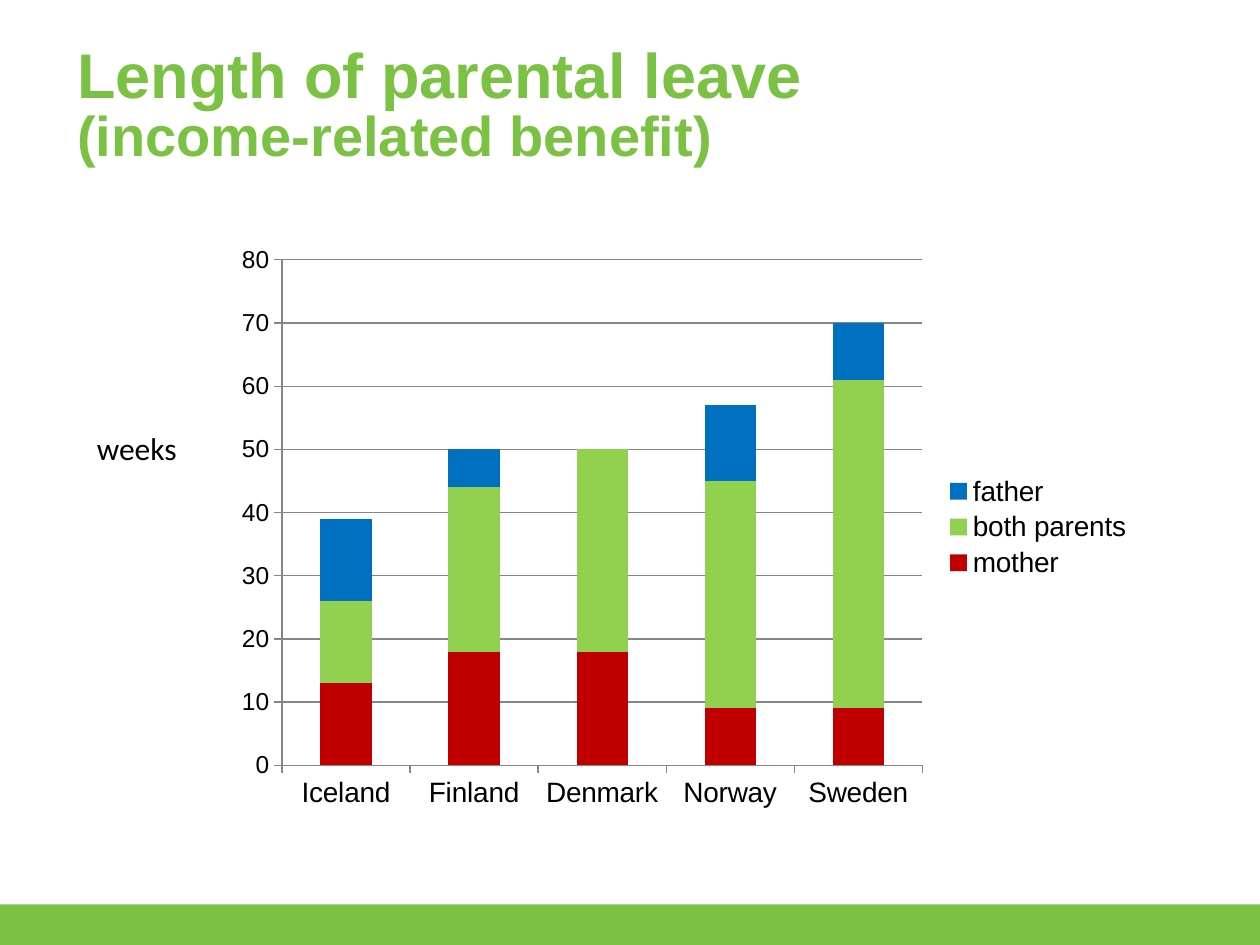
from pptx import Presentation
from pptx.chart.data import CategoryChartData
from pptx.dml.color import RGBColor
from pptx.enum.chart import XL_CHART_TYPE as Chart, XL_LEGEND_POSITION as Legend, XL_TICK_MARK as Tick
from pptx.enum.shapes import MSO_SHAPE as Shape
from pptx.enum.text import MSO_ANCHOR as Anchor
from pptx.util import Inches, Pt

GREEN = RGBColor(0x7B, 0xC1, 0x43)
BLACK = RGBColor(0x00, 0x00, 0x00)
GREY = RGBColor(0x86, 0x86, 0x86)
RED = RGBColor(0xC0, 0x00, 0x00)
LIME = RGBColor(0x92, 0xD0, 0x50)
BLUE = RGBColor(0x00, 0x70, 0xC0)

WIDTH, HEIGHT = 10, 7.5
COUNTRIES = ["Iceland", "Finland", "Denmark", "Norway", "Sweden"]
LEAVE = [
    ("mother", RED, [13, 18, 18, 9, 9]),
    ("both parents", LIME, [13, 26, 32, 36, 52]),
    ("father", BLUE, [13, 6, 0, 12, 9]),
]


def box(left, top, width, height):
    """Turn percentages of the slide's size into lengths."""
    return (Inches(left * WIDTH / 100), Inches(top * HEIGHT / 100),
            Inches(width * WIDTH / 100), Inches(height * HEIGHT / 100))


def set_font(font, color=BLACK, **values):
    for name, value in values.items():
        setattr(font, name, value)
    font.color.rgb = color


def add_footer_band(slide, area):
    sp = slide.shapes.add_shape(Shape.RECTANGLE, *area)
    sp.shadow.inherit = False
    sp.fill.solid()
    sp.fill.fore_color.rgb = GREEN
    sp.line.fill.background()


def add_text(slide, area, lines, color, spacing=None, anchor=Anchor.TOP, **values):
    """Write (text, size) lines as one paragraph with line breaks."""
    tf = slide.shapes.add_textbox(*area).text_frame
    tf.word_wrap = True
    tf.vertical_anchor = anchor
    p = tf.paragraphs[0]
    p.line_spacing = spacing
    for i, (text, size) in enumerate(lines):
        if i:
            p.add_line_break()
        r = p.add_run()
        r.text = text
        set_font(r.font, color, size=Pt(size), **values)


def style_axis(axis, size):
    axis.major_tick_mark = Tick.OUTSIDE
    axis.minor_tick_mark = Tick.NONE
    axis.format.line.color.rgb = GREY
    set_font(axis.tick_labels.font, size=Pt(size), name="Arial")


def add_leave_chart(slide, area):
    data = CategoryChartData()
    data.categories = COUNTRIES
    for name, _, weeks in LEAVE:
        data.add_series(name, weeks)
    chart = slide.shapes.add_chart(Chart.COLUMN_STACKED, *area, data).chart
    set_font(chart.font, size=Pt(10), name="Arial")
    chart.has_title = False

    plot = chart.plots[0]
    plot.vary_by_categories = False
    plot.gap_width, plot.overlap = 150, 100
    for series, (_, color, _) in zip(plot.series, LEAVE):
        series.format.fill.solid()
        series.format.fill.fore_color.rgb = color

    style_axis(chart.category_axis, 16)
    axis = chart.value_axis
    style_axis(axis, 14)
    axis.minimum_scale, axis.maximum_scale, axis.major_unit = 0, 80, 10
    axis.has_major_gridlines = True
    axis.major_gridlines.format.line.color.rgb = GREY

    chart.has_legend = True
    chart.legend.position = Legend.RIGHT
    chart.legend.include_in_layout = False
    set_font(chart.legend.font, size=Pt(16), name="Arial")


def main():
    prs = Presentation()
    prs.slide_width, prs.slide_height = Inches(WIDTH), Inches(HEIGHT)
    slide = prs.slides.add_slide(prs.slide_layouts[6])
    add_footer_band(slide, box(0, 95.7, 100, 4.3))
    add_text(slide, box(5.15, 3.75, 89.8, 14.7),
             [("Length of parental leave", 36), ("(income-related benefit)", 32)],
             GREEN, 0.85, Anchor.BOTTOM, name="Arial", bold=True)
    add_text(slide, box(6.7, 44.8, 10.2, 5.3), [("weeks", 18)], BLACK, name="Calibri")
    add_leave_chart(slide, box(17.72, 24.8, 73.23, 61.95))
    prs.save("out.pptx")


if __name__ == "__main__":
    main()
